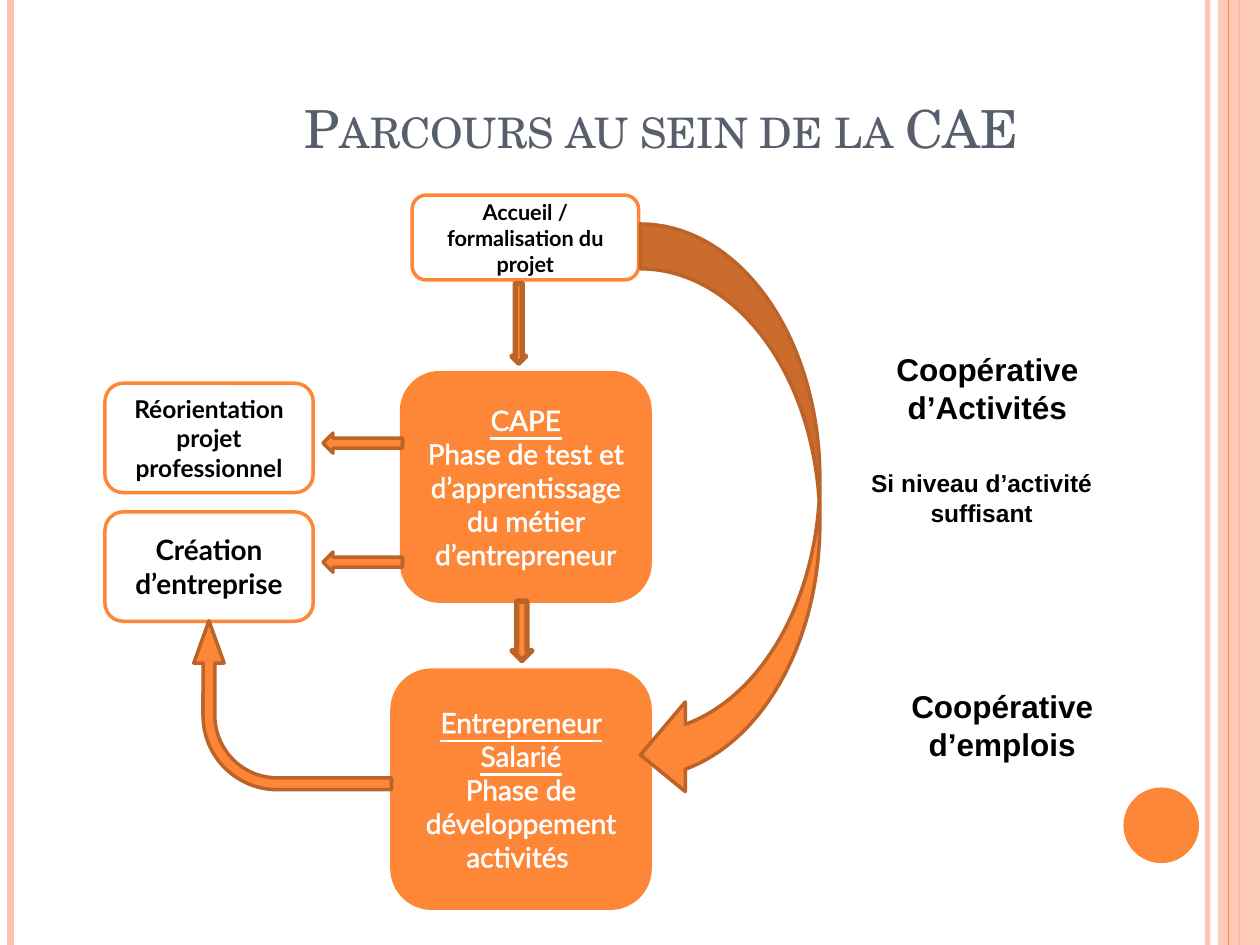
from dataclasses import dataclass, field

from lxml.etree import SubElement
from pptx import Presentation
from pptx.dml.color import RGBColor
from pptx.enum.shapes import MSO_CONNECTOR as Link, MSO_SHAPE as Geo
from pptx.enum.text import MSO_ANCHOR as Anchor, PP_ALIGN as Align
from pptx.oxml.ns import qn
from pptx.util import Pt

COLOURS = {
    "orange": "FE8637", "rust": "BC6329", "peach": "FEC3AE",
    "slate": "575F6D", "white": "FFFFFF", "black": "000000",
}
WIDTH, HEIGHT = 720, 540


@dataclass
class Stripe:
    x: float
    colour: str
    weight: float
    alpha: int = 100


@dataclass
class Step:
    box: tuple
    lines: list
    size: float
    main: bool = False  # filled stage with an underlined heading


@dataclass
class Arrow:
    geo: Geo
    box: tuple
    weight: float = 2
    rotation: float = 0
    adjust: list = field(default_factory=list)


@dataclass
class Label:
    box: tuple
    text: str
    size: float
    colour: str = "black"
    face: str = "Arial"
    bold: bool = True
    anchor: Anchor = Anchor.TOP
    small_caps: bool = False


def rgb(name: str) -> RGBColor:
    return RGBColor.from_string(COLOURS[name])


def points(box: tuple) -> list:
    return [Pt(length) for length in box]


def set_alpha(fill_parent, percent: int) -> None:
    if percent < 100:
        colour = next(fill_parent.iter(qn("a:srgbClr")))
        SubElement(colour, qn("a:alpha"), val=str(percent * 1000))


def draw_stripe(shapes, stripe: Stripe) -> None:
    x = Pt(stripe.x)
    rule = shapes.add_connector(Link.STRAIGHT, x, 0, x, Pt(HEIGHT))
    rule.line.color.rgb = rgb(stripe.colour)
    rule.line.width = Pt(stripe.weight)
    properties = rule._element.spPr
    set_alpha(properties, stripe.alpha)
    SubElement(properties, qn("a:effectLst"))


def draw_shape(shapes, geo: Geo, box: tuple, fill: str, line: str = "", weight: float = 0):
    shape = shapes.add_shape(geo, *points(box))
    shape.shadow.inherit = False
    shape.fill.solid()
    shape.fill.fore_color.rgb = rgb(fill)
    if line:
        shape.line.color.rgb = rgb(line)
        shape.line.width = Pt(weight)
    else:
        shape.line.fill.background()
    return shape


def write(paragraph, text: str, colour: str, formats: dict):
    paragraph.alignment = Align.CENTER
    run = paragraph.add_run()
    run.text = text
    for name, value in formats.items():
        setattr(run.font, name, value)
    run.font.color.rgb = rgb(colour)
    return run


def outline_text(run, colour: str, weight: float) -> None:
    properties = run._r.get_or_add_rPr()
    outline = SubElement(properties, qn("a:ln"), w=str(Pt(weight)))
    fill = SubElement(outline, qn("a:solidFill"))
    SubElement(fill, qn("a:srgbClr"), val=COLOURS[colour])
    properties.insert(0, outline)


def draw_step(shapes, step: Step) -> None:
    fill, ink = ("orange", "white") if step.main else ("white", "black")
    shape = draw_shape(shapes, Geo.ROUNDED_RECTANGLE, step.box, fill, "orange", 2)
    frame = shape.text_frame
    frame.word_wrap = True
    frame.vertical_anchor = Anchor.MIDDLE
    for index, line in enumerate(step.lines):
        paragraph = frame.add_paragraph() if index else frame.paragraphs[0]
        formats = {"name": "Lato", "size": Pt(step.size), "bold": not step.main,
                   "underline": step.main and index == 0}
        run = write(paragraph, line, ink, formats)
        if step.main:
            outline_text(run, ink, 1.45)


def draw_arrow(shapes, arrow: Arrow) -> None:
    shape = draw_shape(shapes, arrow.geo, arrow.box, "orange", "rust", arrow.weight)
    shape.rotation = arrow.rotation
    for index, value in enumerate(arrow.adjust):
        shape.adjustments[index] = value


def draw_label(shapes, label: Label) -> None:
    frame = shapes.add_textbox(*points(label.box)).text_frame
    frame.word_wrap = True
    frame.vertical_anchor = label.anchor
    formats = {"name": label.face, "size": Pt(label.size), "bold": label.bold}
    run = write(frame.paragraphs[0], label.text, label.colour, formats)
    if label.small_caps:
        run._r.get_or_add_rPr().set("cap", "small")


OUTER_STRIPES = [
    Stripe(690, "peach", 3, 93), Stripe(6, "peach", 4.5), Stripe(708, "orange", 1.5),
]
INNER_STRIPE = Stripe(702, "orange", 0.75)

TITLE = Label((72, 21.6, 612, 72.7), "Parcours au sein de la CAE", 30, "slate",
              "TeX Gyre Schola", False, Anchor.BOTTOM, True)

STEPS = [
    Step((235.5, 111.5, 129.5, 48.5), ["Accueil / formalisation du projet"], 12.4),
    Step((229.5, 213, 142, 130.5),
         ["CAPE", "Phase de test et d’apprentissage du métier d’entrepreneur"], 16, True),
    Step((60, 219, 119, 62.5), ["Réorientation projet professionnel"], 14),
    Step((60, 292.5, 119, 62.5), ["Création d’entreprise"], 16),
    Step((224, 383, 147.5, 136),
         ["Entrepreneur Salarié", "Phase de développement activités "], 16, True),
]

ARROWS = [
    Arrow(Geo.CURVED_LEFT_ARROW, (366, 128, 102.5, 329)),
    Arrow(Geo.DOWN_ARROW, (292.5, 162, 8, 45.5), 3),
    Arrow(Geo.DOWN_ARROW, (292.5, 343.5, 11.5, 34), 3),
    Arrow(Geo.LEFT_ARROW, (184.5, 247.5, 45.5, 11.5)),
    Arrow(Geo.LEFT_ARROW, (184.5, 315.5, 45.5, 11.5)),
    Arrow(Geo.BENT_ARROW, (119, 346.5, 96.5, 113), 2, 270, [0.07, 0.09, 0.25, 0.44]),
]

LABELS = [
    Label((479, 264, 164, 41), "Si niveau d’activité suffisant", 14),
    Label((502, 196.5, 124.5, 51), "Coopérative d’Activités", 18),
    Label((507.5, 389, 130.5, 51), "Coopérative d’emplois", 18),
]


def main() -> None:
    deck = Presentation()
    deck.slide_width, deck.slide_height = Pt(WIDTH), Pt(HEIGHT)
    shapes = deck.slides.add_slide(deck.slide_layouts[6]).shapes

    # Side decoration
    for stripe in OUTER_STRIPES:
        draw_stripe(shapes, stripe)
    band = draw_shape(shapes, Geo.RECTANGLE, (696, 0, 24, HEIGHT), "peach")
    set_alpha(band._element.spPr, 87)
    draw_stripe(shapes, INNER_STRIPE)
    draw_shape(shapes, Geo.OVAL, (642, 450, 43.2, 43.2), "orange")

    # Title, steps of the path, arrows and side labels
    draw_label(shapes, TITLE)
    for step in STEPS:
        draw_step(shapes, step)
    for arrow in ARROWS:
        draw_arrow(shapes, arrow)
    for label in LABELS:
        draw_label(shapes, label)

    deck.save("out.pptx")


if __name__ == "__main__":
    main()
